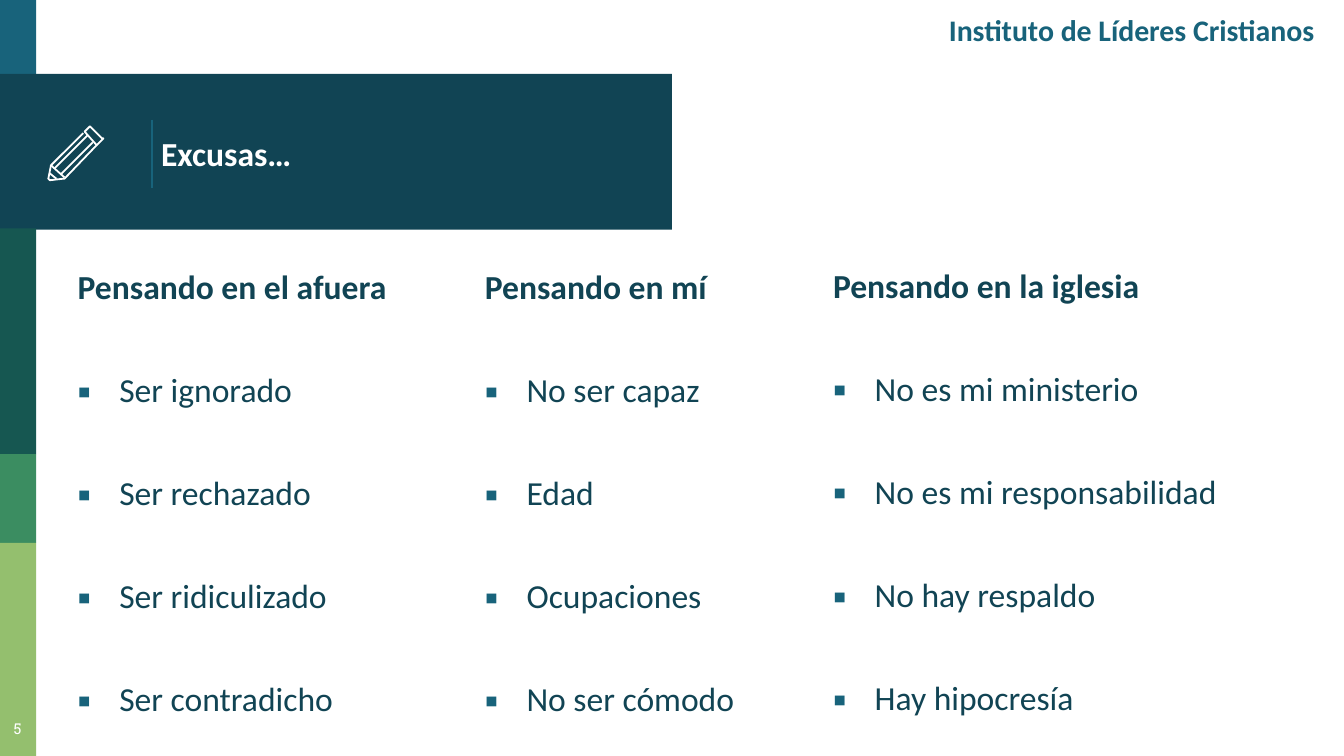
import pptx
import pptx.util
import pptx.dml.color
import pptx.enum.shapes
import pptx.enum.text
import pptx.oxml.ns
from lxml import etree

Inches = pptx.util.Inches
Pt = pptx.util.Pt
RGBColor = pptx.dml.color.RGBColor
Align = pptx.enum.text.PP_ALIGN
Anchor = pptx.enum.text.MSO_ANCHOR
qn = pptx.oxml.ns.qn

BLUE = RGBColor(0x18, 0x63, 0x7B)
NAVY = RGBColor(0x11, 0x44, 0x54)
TEAL = RGBColor(0x16, 0x57, 0x51)
GREEN = RGBColor(0x3B, 0x8D, 0x61)
LIME = RGBColor(0x94, 0xBF, 0x6E)
WHITE = RGBColor(0xFF, 0xFF, 0xFF)

# left, top, width, height, fill
BANDS = [
    (0, 0, 0.27, 0.58, BLUE),
    (0, 0.55, 5, 1.16, NAVY),
    (0, 1.7, 0.27, 1.68, TEAL),
    (0, 3.38, 0.27, 0.66, GREEN),
    (0, 4.04, 0.27, 1.59, LIME),
]

# left, top, width, heading, items
COLUMNS = [
    (0.48, 1.88, 3.07, "Pensando en el afuera",
     ["Ser ignorado", "Ser rechazado", "Ser ridiculizado", "Ser contradicho"]),
    (3.51, 1.88, 3.07, "Pensando en mí",
     ["No ser capaz", "Edad", "Ocupaciones", "No ser cómodo"]),
    (6.1, 1.87, 3.23, "Pensando en la iglesia",
     ["No es mi ministerio", "No es mi responsabilidad",
      "No hay respaldo", "Hay hipocresía"]),
]

# Pencil outlines in hundredths of an inch: points, closed
PENCIL = [
    ([(76, 103), (68, 95), (67, 94), (66, 95), (63, 98),
      (72, 108), (76, 104), (77, 103)], True),
    ([(69, 106), (45, 130)], False),
    ([(62, 99), (38, 123), (36, 133), (37, 134), (38, 134),
      (47, 133), (48, 133), (72, 108)], False),
    ([(41, 125), (65, 101)], False),
    ([(42, 133), (37, 129)], False),
    ([(38, 123), (48, 132)], False),
]


def add_band(slide, left, top, width, height, fill):
    band = slide.shapes.add_shape(
        pptx.enum.shapes.MSO_SHAPE.RECTANGLE,
        Inches(left), Inches(top), Inches(width), Inches(height))
    band.shadow.inherit = False
    band.fill.solid()
    band.fill.fore_color.rgb = fill
    band.line.fill.background()


def add_rule(slide, x, top, end):
    rule = slide.shapes.add_connector(
        pptx.enum.shapes.MSO_CONNECTOR.STRAIGHT,
        Inches(x), Inches(top), Inches(x), Inches(end))
    rule.line.color.rgb = BLUE
    rule.line.width = Pt(0.75)
    props = rule._element.find(qn("p:spPr"))
    etree.SubElement(props, qn("a:effectLst"))


def add_stroke(slide, points, closed):
    pen = slide.shapes.build_freeform(*points[0], scale=Inches(0.01))
    pen.add_line_segments(points[1:], close=closed)
    stroke = pen.convert_to_shape()
    stroke.shadow.inherit = False
    stroke.fill.background()
    stroke.line.color.rgb = WHITE
    stroke.line.width = Pt(0.96)


def add_box(slide, left, top, width, height, anchor=Anchor.TOP):
    """Add an empty wrapping text box and return its frame."""
    box = slide.shapes.add_textbox(
        Inches(left), Inches(top), Inches(width), Inches(height))
    frame = box.text_frame
    frame.word_wrap = True
    frame.vertical_anchor = anchor
    frame.margin_left = frame.margin_right = Inches(0.1)
    frame.margin_top = frame.margin_bottom = Inches(0.1)
    return frame


def set_text(para, text, size, color, bold=False, face="Calibri",
             align=Align.LEFT):
    para.text = text
    para.alignment = align
    font = para.runs[0].font
    font.name = face
    font.size = Pt(size)
    font.bold = bold
    font.color.rgb = color


def add_bullet(para):
    props = para._p.get_or_add_pPr()
    props.set("marL", str(Inches(0.31)))
    props.set("indent", str(-Inches(0.31)))
    tint = etree.SubElement(props, qn("a:buClr"))
    etree.SubElement(tint, qn("a:srgbClr"), val=str(BLUE))
    etree.SubElement(props, qn("a:buFont"), typeface="Roboto Slab")
    etree.SubElement(props, qn("a:buChar"), char="▪")


def add_column(slide, left, top, width, heading, items):
    frame = add_box(slide, left, top, width, 3.45)
    set_text(frame.paragraphs[0], heading, 18, NAVY, bold=True)
    for item in items:
        para = frame.add_paragraph()
        add_bullet(para)
        para.space_before = Pt(33.6)
        set_text(para, item, 18, NAVY)


def main():
    deck = pptx.Presentation()
    deck.slide_width = Inches(10)
    deck.slide_height = Inches(10) * 9 // 16
    slide = deck.slides.add_slide(deck.slide_layouts[6])

    for band in BANDS:
        add_band(slide, *band)
    add_rule(slide, 1.13, 0.89, 1.4)

    title = add_box(slide, 1.1, 0.58, 4.22, 1.12, Anchor.MIDDLE)
    set_text(title.paragraphs[0], "Excusas…", 18, WHITE, bold=True)

    number = add_box(slide, -0.06, 5.27, 0.38, 0.35)
    number.margin_top = Inches(0.13)
    set_text(number.paragraphs[0], "5", 8, WHITE,
             face="Roboto Slab", align=Align.CENTER)

    school = add_box(slide, 6.18, 0.06, 3.7, 0.61)
    school.margin_top = Inches(0.03)
    set_text(school.paragraphs[0], "Instituto de Líderes Cristianos",
             16, BLUE, bold=True, align=Align.RIGHT)

    for points, closed in PENCIL:
        add_stroke(slide, points, closed)
    for column in COLUMNS:
        add_column(slide, *column)

    deck.save("out.pptx")


if __name__ == "__main__":
    main()
